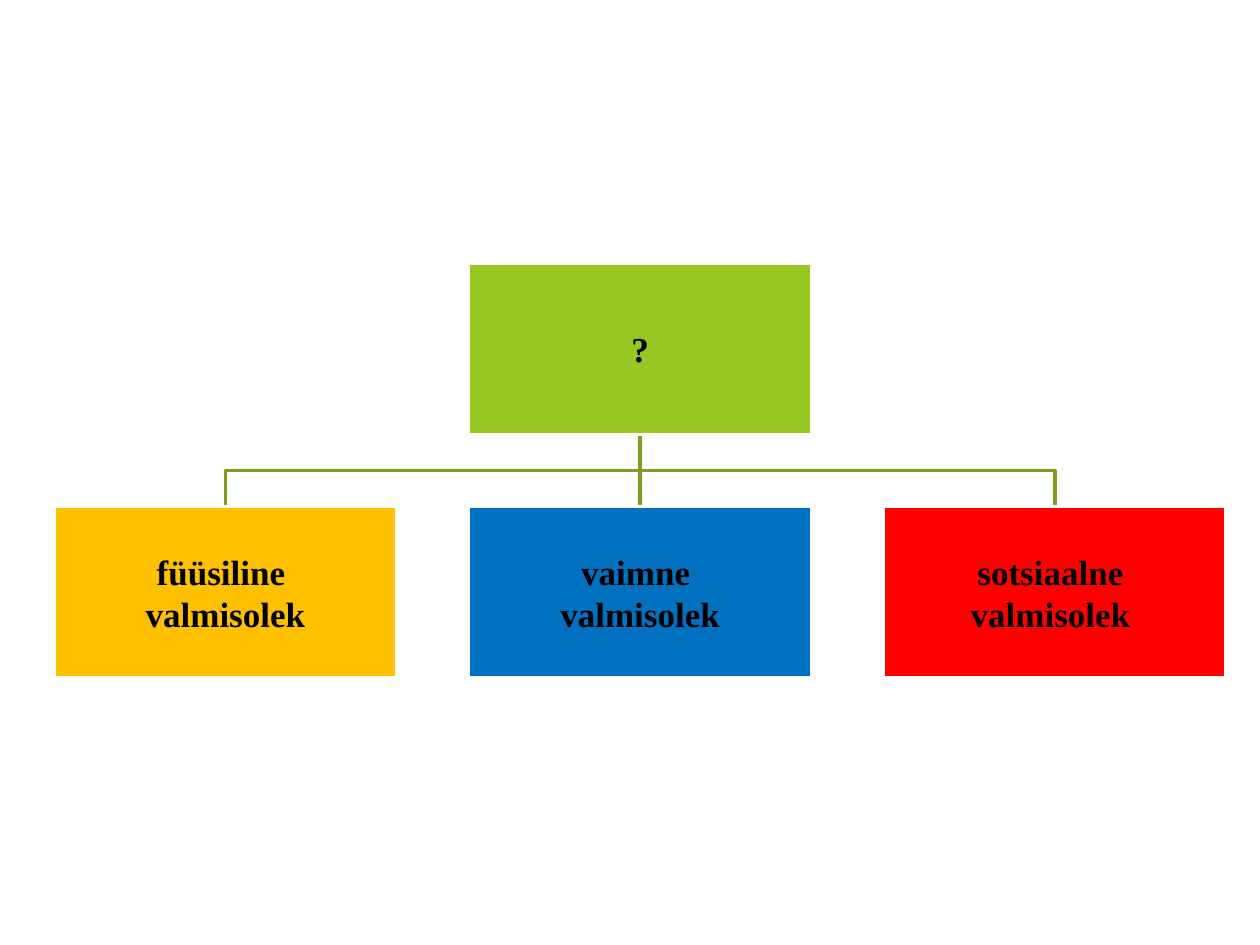
from pptx import Presentation
from pptx.dml.color import RGBColor as RGB
from pptx.enum.shapes import MSO_CONNECTOR as LINK, MSO_SHAPE as SHAPE
from pptx.enum.text import MSO_ANCHOR as ANCHOR, PP_ALIGN as ALIGN
from pptx.oxml.ns import qn
from pptx.util import Cm, Pt

THEME = {
    "font": "Times New Roman", "size": Pt(20), "line": Pt(2),
    "text": RGB(0, 0, 0), "edge": RGB(255, 255, 255),
    "link": RGB.from_string("7A9F1C"),
    "root": RGB.from_string("98C723"),
    "amber": RGB.from_string("FFC000"),
    "blue": RGB.from_string("0070C0"),
    "red": RGB.from_string("FF0000"),
}

deck = Presentation()
deck.slide_width, deck.slide_height = Cm(25.4), Cm(19.05)
slide = deck.slides.add_slide(deck.slide_layouts[6])
shapes = slide.shapes

# Grid: three columns, two rows
wide, high = Cm(6.91), Cm(3.45)
left, step = Cm(1.09), Cm(8.36)
top, low = Cm(5.31), Cm(10.21)


def add_box(col, y, fill, lines):
    box = shapes.add_shape(SHAPE.RECTANGLE, left + col * step, y, wide, high)
    box.shadow.inherit = False
    box.fill.solid()
    box.fill.fore_color.rgb = fill
    box.line.color.rgb = THEME["edge"]
    box.line.width = THEME["line"]
    frame = box.text_frame
    frame.word_wrap = True
    frame.vertical_anchor = ANCHOR.MIDDLE
    frame.margin_left = frame.margin_right = Cm(0.03)
    frame.margin_top = frame.margin_bottom = Cm(0.03)
    for i, line in enumerate(lines):
        para = frame.add_paragraph() if i else frame.paragraphs[0]
        para.alignment = ALIGN.CENTER
        run = para.add_run()
        run.text = line
        run.font.name = THEME["font"]
        run.font.size = THEME["size"]
        run.font.bold = True
        run.font.color.rgb = THEME["text"]
    return box


# Boxes
root = add_box(1, top, THEME["root"], ["?"])
leaves = [
    add_box(col, low, THEME[tone], lines)
    for col, (tone, lines) in enumerate([
        ("amber", ["füüsiline ", "valmisolek"]),
        ("blue", ["vaimne ", "valmisolek"]),
        ("red", ["sotsiaalne ", "valmisolek "]),
    ])
]

# Straight link to the middle box, bent links to the outer ones
start = root.left + wide // 2
base = root.top + high
mid = (base + low) // 2
links = []
for leaf in leaves:
    end = leaf.left + wide // 2
    if end == start:
        link = shapes.add_connector(LINK.STRAIGHT, start, base, end, low)
        link.begin_connect(root, 2)
        link.end_connect(leaf, 0)
        props = link._element.spPr
        props.append(props.makeelement(qn("a:effectLst"), {}))
    else:
        path = shapes.build_freeform(start, base)
        path.add_line_segments([(start, mid), (end, mid), (end, low)],
                               close=False)
        link = path.convert_to_shape()
        link.shadow.inherit = False
        link.fill.background()
    link.line.color.rgb = THEME["link"]
    link.line.width = THEME["line"]
    links.append(link)

# Links lie behind the boxes
for link in links:
    root._element.addprevious(link._element)

deck.save("out.pptx")
